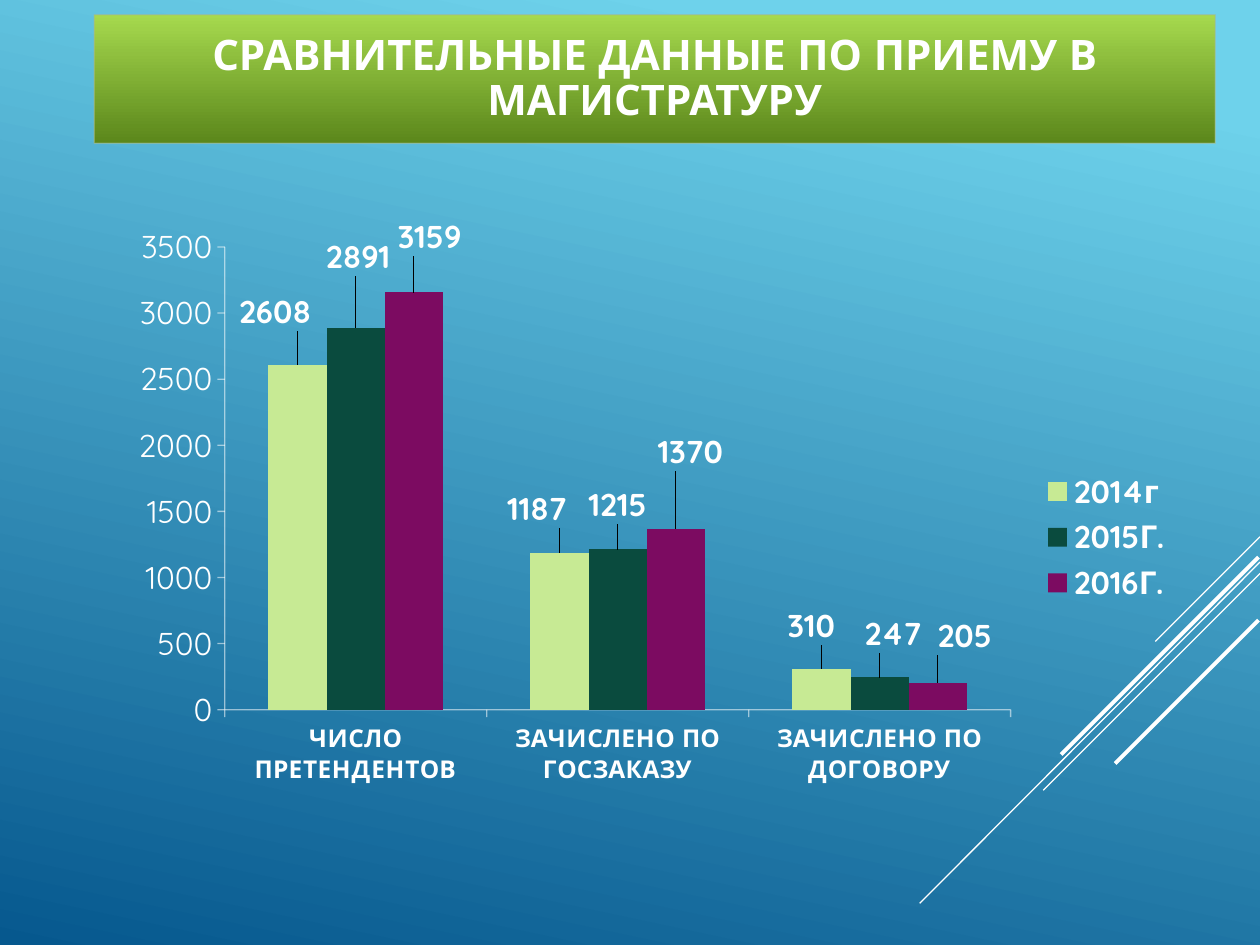
from dataclasses import dataclass

from lxml import etree
from pptx import Presentation
from pptx import util as u
from pptx.chart.data import CategoryChartData
from pptx.dml.color import RGBColor
from pptx.enum import chart as ch, shapes, text
from pptx.oxml import parse_xml
from pptx.oxml.ns import nsdecls, qn

FACE = "Quicksand"
WHITE = RGBColor(0xFF, 0xFF, 0xFF)
SKY = RGBColor(0x6E, 0xD2, 0xEB)
NAVY = RGBColor(0x06, 0x58, 0x8E)
LIME = RGBColor(0xA6, 0xD9, 0x4E)
MOSS = RGBColor(0x5B, 0x87, 0x1B)
SAGE = RGBColor(0xA4, 0xBB, 0x8B)
PALE = RGBColor(0xC7, 0xEA, 0x94)
PINE = RGBColor(0x0A, 0x4B, 0x3E)
PLUM = RGBColor(0x7C, 0x0B, 0x61)

TITLE = "СРАВНИТЕЛЬНЫЕ ДАННЫЕ ПО ПРИЕМУ В МАГИСТРАТУРУ"
CATS = ["ЧИСЛО ПРЕТЕНДЕНТОВ", "ЗАЧИСЛЕНО ПО ГОСЗАКАЗУ", "ЗАЧИСЛЕНО ПО ДОГОВОРУ"]


@dataclass
class Ray:
    """Diagonal line: right end, left end (cm) and width (pt)."""
    x1: float
    y1: float
    x2: float
    y2: float
    width: float = 0.75


@dataclass
class Year:
    """Chart series; shifts move its labels, in percent of the chart."""
    name: str
    vals: list[int]
    color: RGBColor
    shifts: list[tuple[float, float]]


RAYS = [
    Ray(25.4, 10.82, 23.29, 12.93),
    Ray(25.4, 11.33, 18.54, 18.21),
    Ray(25.4, 11.56, 21.03, 15.93),
    Ray(25.37, 11.23, 21.39, 15.21, 2.25),
    Ray(25.37, 12.5, 22.48, 15.39, 2.25),
]
YEARS = [
    Year("2014г", [2608, 1187, 310], PALE, [(-2, -4), (-2, -2.8), (-0.9, -2.6)]),
    Year("2015Г.", [2891, 1215, 247], PINE, [(0.2, -6.5), (0, -2.8), (1.2, -2.6)]),
    Year("2016Г.", [3159, 1370, 205], PLUM, [(1.4, -4.3), (1.3, -7.4), (2.4, -3.1)]),
]


def style(font, size: float = 18, bold: bool = False) -> None:
    font.name, font.size, font.bold = FACE, u.Pt(size), bold
    font.color.rgb = WHITE


def write(frame, words: str, *, size: float, bold: bool, align, space: float) -> None:
    frame.word_wrap = True
    frame.vertical_anchor = text.MSO_ANCHOR.MIDDLE
    para = frame.paragraphs[0]
    para.alignment, para.line_spacing = align, space
    run = para.add_run()
    run.text = words
    style(run.font, size, bold)


def blend(fill, stops: list[tuple[float, RGBColor]], angle: float) -> None:
    fill.gradient()
    fill.gradient_angle = 360 - angle
    for stop, (pos, color) in zip(fill.gradient_stops, stops):
        stop.position, stop.color.rgb = pos, color


def stroke(line, color: RGBColor, width: float, alpha: int) -> None:
    line.color.rgb, line.width = color, u.Pt(width)
    tint = line.fill._xPr.find(".//" + qn("a:srgbClr"))
    etree.SubElement(tint, qn("a:alpha"), val=str(alpha * 1000))


def draw_ray(slide, ray: Ray) -> None:
    line = slide.shapes.add_connector(
        shapes.MSO_CONNECTOR.STRAIGHT,
        u.Cm(ray.x1), u.Cm(ray.y1), u.Cm(ray.x2), u.Cm(ray.y2))
    line.line.color.rgb, line.line.width = WHITE, u.Pt(ray.width)
    etree.SubElement(line._element.spPr, qn("a:effectLst"))


def draw_title(slide) -> None:
    box = slide.shapes.add_shape(
        shapes.MSO_SHAPE.RECTANGLE, u.Cm(1.9), u.Cm(0.3), u.Cm(22.6), u.Cm(2.59))
    box.shadow.inherit = False
    blend(box.fill, [(0, LIME), (1, MOSS)], 90)
    stroke(box.line, SAGE, 0.75, 60)
    write(box.text_frame, TITLE, size=24, bold=True,
          align=text.PP_ALIGN.CENTER, space=0.9)


def layout(**parts) -> etree._Element:
    tags = "".join(f'<c:{tag} val="{val}"/>' for tag, val in parts.items())
    return parse_xml(f'<c:layout {nsdecls("c")}><c:manualLayout>{tags}'
                     '</c:manualLayout></c:layout>')


def draw_series(series, year: Year) -> None:
    series.format.fill.solid()
    series.format.fill.fore_color.rgb = year.color
    series.smooth = False if hasattr(series, "smooth") else None
    labels = series.data_labels
    labels.show_value = True
    style(labels.font, bold=True)
    for i, (dx, dy) in enumerate(year.shifts):
        label = series.points[i].data_label
        style(label.font, bold=True)
        label.position = ch.XL_LABEL_POSITION.OUTSIDE_END
        node = series._element.xpath("c:dLbls/c:dLbl")[i]
        node.insert(1, layout(x=round(dx / 100, 4), y=round(dy / 100, 4)))


def draw_chart(slide) -> None:
    data = CategoryChartData()
    data.categories = CATS
    for year in YEARS:
        data.add_series(year.name, year.vals)
    chart = slide.shapes.add_chart(
        ch.XL_CHART_TYPE.COLUMN_CLUSTERED,
        u.Cm(1.3), u.Cm(3.73), u.Cm(22.6), u.Cm(14.2), data).chart
    chart.has_title = False
    style(chart.font)

    # Plot area
    plot = chart.plots[0]
    plot.gap_width, plot.overlap, plot.vary_by_categories = 150, 0, False
    area = chart._chartSpace.chart.plotArea
    for old in area.findall(qn("c:layout")):
        area.remove(old)
    area.insert(0, layout(layoutTarget="inner", xMode="edge", yMode="edge",
                          x=0.143, y=0.088, w=0.701, h=0.657))
    for series, year in zip(plot.series, YEARS):
        draw_series(series, year)

    # Axes
    for axis, size, bold in ((chart.category_axis, 14, True),
                             (chart.value_axis, 18, False)):
        axis.has_major_gridlines = False
        axis.major_tick_mark = ch.XL_TICK_MARK.OUTSIDE
        axis.minor_tick_mark = ch.XL_TICK_MARK.NONE
        style(axis.tick_labels.font, size, bold)
        stroke(axis.format.line, WHITE, 0.75, 55)
    chart.value_axis.minimum_scale = 0
    chart.value_axis.maximum_scale = 3500
    chart.value_axis.major_unit = 500

    # Legend
    chart.has_legend = True
    chart.legend.position = ch.XL_LEGEND_POSITION.RIGHT
    chart.legend.include_in_layout = False
    style(chart.legend.font, bold=True)


def main() -> None:
    deck = Presentation()
    deck.slide_width, deck.slide_height = u.Cm(25.4), u.Cm(19.05)
    slide = deck.slides.add_slide(deck.slide_layouts[6])
    blend(slide.background.fill, [(0.1, SKY), (1, NAVY)], 102)
    for ray in RAYS:
        draw_ray(slide, ray)
    draw_title(slide)
    draw_chart(slide)
    deck.save("out.pptx")


if __name__ == "__main__":
    main()
